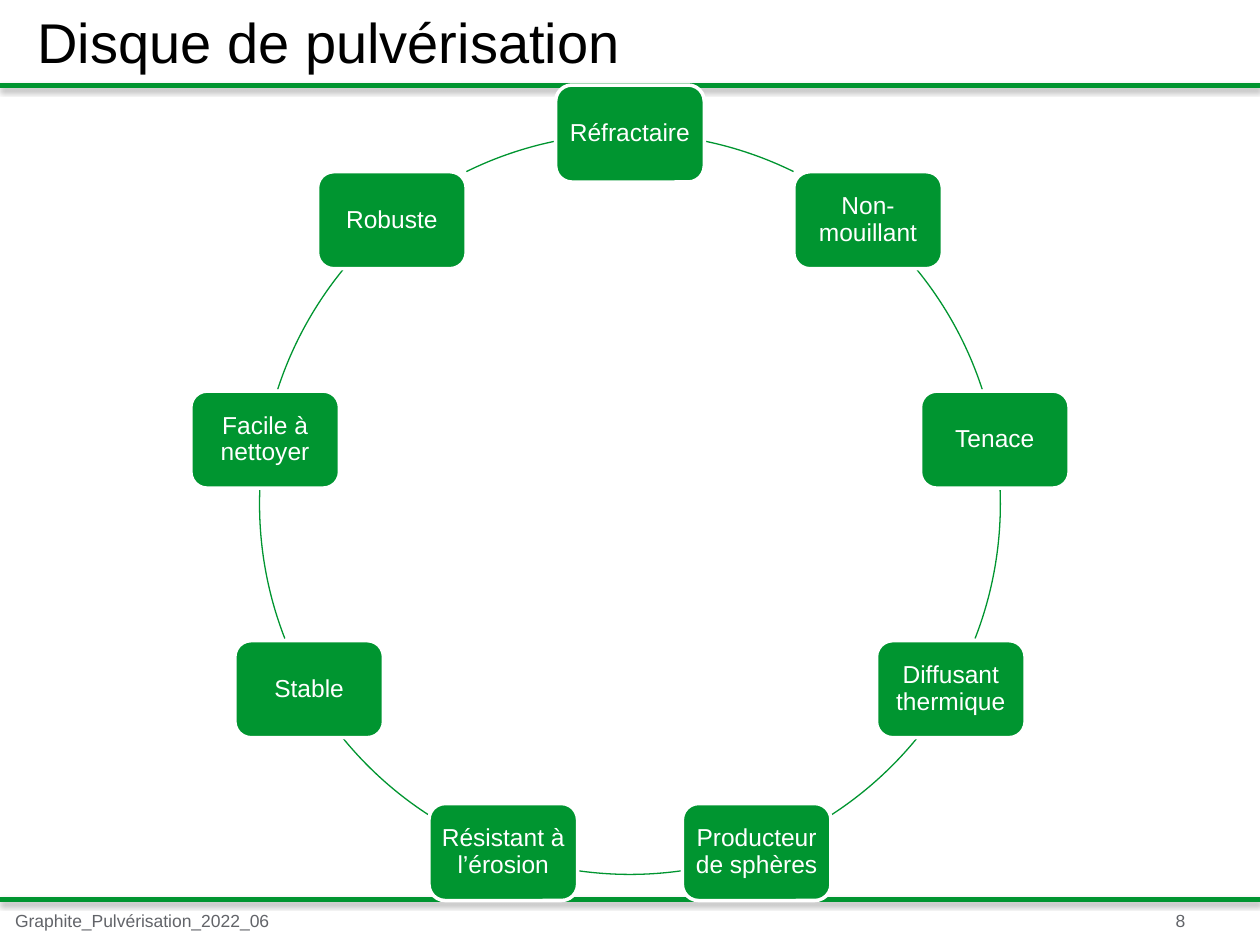
from math import cos, radians, sin

from lxml import etree
from pptx import Presentation
from pptx.dml.color import RGBColor
from pptx.enum.shapes import MSO_CONNECTOR, MSO_SHAPE
from pptx.enum.text import MSO_ANCHOR, PP_ALIGN
from pptx.oxml.ns import qn
from pptx.util import Inches, Pt

COLORS = {"green": "009530", "white": "FFFFFF", "black": "000000", "grey": "626469"}
FONT = "Arial"

TITLE = "Disque de pulvérisation"
FOOTER = "Graphite_Pulvérisation_2022_06"
PAGE_NUMBER = "8"
PROPERTIES = [
    "Réfractaire", "Non-mouillant", "Tenace", "Diffusant thermique",
    "Producteur de sphères", "Résistant à l’érosion", "Stable",
    "Facile à nettoyer", "Robuste",
]
RIGHT_ARCS = [(11.8, 26.2), (50.8, 72), (87.7, 111.3), (129.2, 147)]
BOTTOM_ARC = (172, 188)
RULE_TOPS = [0.68, 7.14]

CENTER_X, CENTER_Y, RADIUS = 5, 4, 2.94
BOX_WIDTH, BOX_HEIGHT, BOX_INSET = 1.18, 0.77, 0.05


def color(name):
    return RGBColor.from_string(COLORS[name])


def add_run(paragraph, text, size, color_name):
    run = paragraph.add_run()
    run.text = text
    run.font.name = FONT
    run.font.size = Pt(size)
    run.font.color.rgb = color(color_name)


def set_insets(frame, inset):
    frame.margin_left = frame.margin_right = Inches(inset)
    frame.margin_top = frame.margin_bottom = Inches(inset)


def add_label(slide, place, text, size, color_name, inset=None):
    frame = slide.shapes.add_textbox(*map(Inches, place)).text_frame
    frame.word_wrap = True
    if inset is not None:
        set_insets(frame, inset)
    add_run(frame.paragraphs[0], text, size, color_name)


def add_rule(slide, top):
    rule = slide.shapes.add_connector(
        MSO_CONNECTOR.STRAIGHT, 0, Inches(top), Inches(10), Inches(top))
    rule.line.color.rgb = color("green")
    rule.line.width = Pt(3)
    effects = etree.SubElement(rule._element.spPr, qn("a:effectLst"))
    shadow = etree.SubElement(
        effects, qn("a:outerShdw"), blurRad=str(Pt(3.1)), dist=str(Pt(1.8)),
        dir="5400000", algn="t", rotWithShape="0")
    shade = etree.SubElement(shadow, qn("a:srgbClr"), val=COLORS["black"])
    etree.SubElement(shade, qn("a:alpha"), val="35000")


def add_arc(slide, start, end):
    arc = slide.shapes.add_shape(
        MSO_SHAPE.ARC, Inches(CENTER_X - RADIUS), Inches(CENTER_Y - RADIUS),
        Inches(2 * RADIUS), Inches(2 * RADIUS))
    for index, degrees in enumerate((start, end)):
        arc.adjustments[index] = (degrees - 90) % 360 * 60000 / 100000
    arc.shadow.inherit = False
    arc.fill.background()
    arc.line.color.rgb = color("green")
    arc.line.width = Pt(0.75)


def add_property(slide, text, degrees):
    x = CENTER_X + RADIUS * sin(radians(degrees))
    y = CENTER_Y - RADIUS * cos(radians(degrees))
    box = slide.shapes.add_shape(
        MSO_SHAPE.ROUNDED_RECTANGLE, Inches(x - BOX_WIDTH / 2),
        Inches(y - BOX_HEIGHT / 2), Inches(BOX_WIDTH), Inches(BOX_HEIGHT))
    box.shadow.inherit = False
    box.fill.solid()
    box.fill.fore_color.rgb = color("green")
    box.line.color.rgb = color("white")
    box.line.width = Pt(2)
    frame = box.text_frame
    frame.word_wrap = True
    frame.vertical_anchor = MSO_ANCHOR.MIDDLE
    set_insets(frame, BOX_INSET)
    paragraph = frame.paragraphs[0]
    paragraph.alignment = PP_ALIGN.CENTER
    paragraph.line_spacing = 0.9
    paragraph.space_after = Pt(4.9)
    add_run(paragraph, text, 14, "white")


def main():
    deck = Presentation()
    deck.slide_width, deck.slide_height = Inches(10), Inches(7.5)
    slide = deck.slides.add_slide(deck.slide_layouts[6])

    add_label(slide, (9.33, 7.22, 0.39, 0.12), PAGE_NUMBER, 10, "grey", 0)
    add_label(slide, (0.12, 7.22, 3.3, 0.34), FOOTER, 10, "grey", 0)
    for top in RULE_TOPS:
        add_rule(slide, top)
    add_label(slide, (0.2, 0.01, 7.17, 0.64), TITLE, 32, "black")

    left_arcs = [(360 - end, 360 - start) for start, end in reversed(RIGHT_ARCS)]
    for start, end in [*RIGHT_ARCS, BOTTOM_ARC, *left_arcs]:
        add_arc(slide, start, end)
    for index, text in enumerate(PROPERTIES):
        add_property(slide, text, index * 360 / len(PROPERTIES))

    deck.save("out.pptx")


if __name__ == "__main__":
    main()
